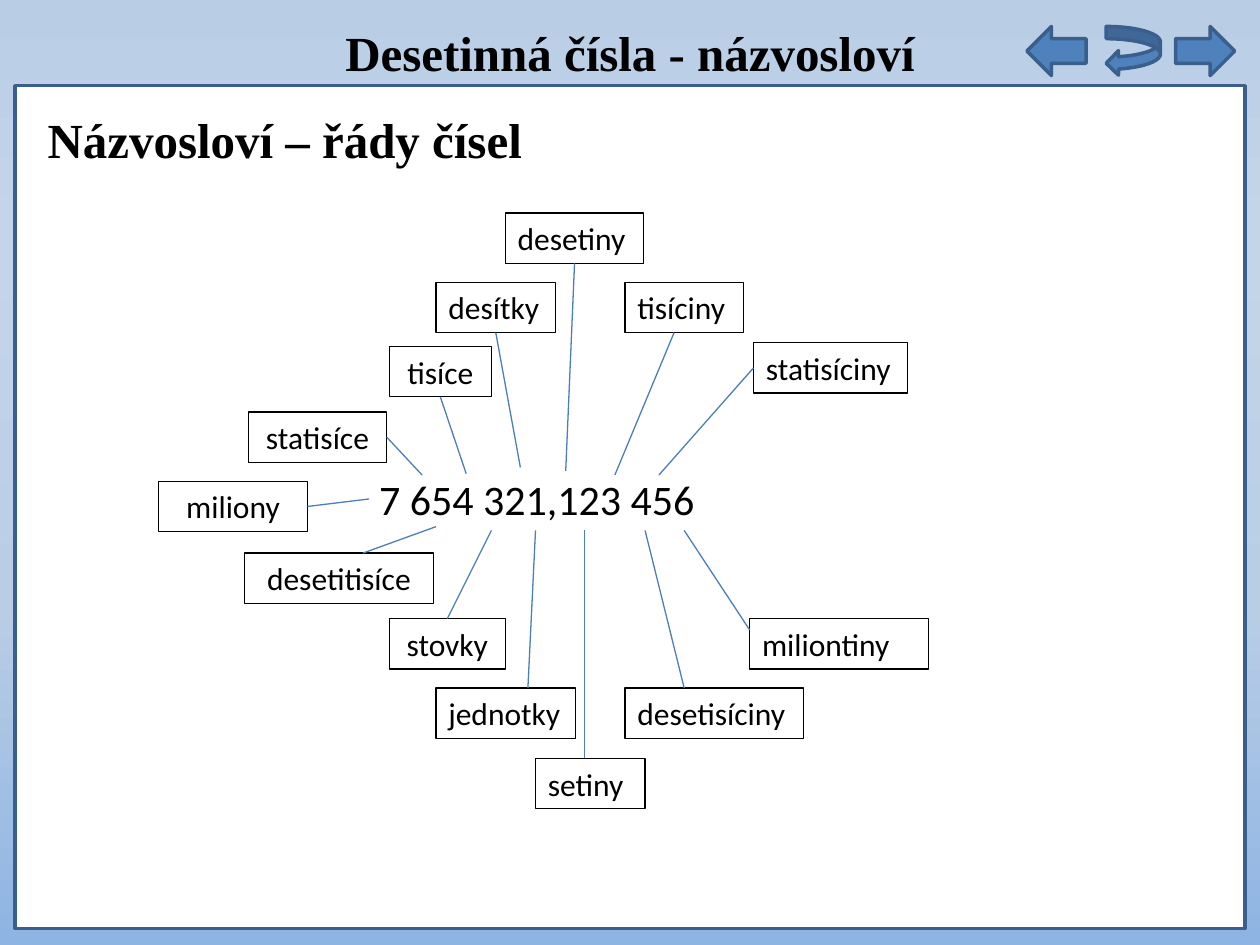
from copy import deepcopy
from dataclasses import dataclass
from enum import IntEnum

from lxml.etree import SubElement
from pptx import Presentation
from pptx.dml.color import RGBColor
from pptx.enum.shapes import MSO_CONNECTOR as Connector, MSO_SHAPE as Shape
from pptx.enum.text import MSO_AUTO_SIZE as AutoSize, PP_ALIGN as Align
from pptx.oxml.ns import qn
from pptx.util import Inches, Pt


@dataclass(frozen=True)
class Theme:
    """Colours, fonts and sizes of the slide."""
    ink: str = "000000"
    paper: str = "FFFFFF"
    accent: str = "4F81BD"
    border: str = "3A5F8C"
    leader: str = "4B7EBC"
    backdrop: tuple = ((0, "B9CDE5"), (25, "C5D5E9"), (64, "B9CDE5"), (100, "8EB4E3"))
    heading_font: str = "Times New Roman"
    body_font: str = "Calibri"
    heading_size: int = 28
    number_size: int = 24
    label_size: int = 18
    border_width: float = 2
    thin_width: float = 0.75


@dataclass(frozen=True)
class Box:
    """A rectangle in inches."""
    left: float
    top: float
    width: float
    height: float

    def inner(self, x, y, width, height):
        """Return a box placed relative to this one."""
        return Box(self.left + x, self.top + y, width, height)

    def point(self, x, y):
        """Return a relative point as slide lengths."""
        return Inches(self.left + x), Inches(self.top + y)

    def lengths(self):
        """Return left, top, width and height as slide lengths."""
        return [Inches(v) for v in (self.left, self.top, self.width, self.height)]


class Side(IntEnum):
    """Connection sites of a rectangle."""
    TOP = 0
    LEFT = 1
    BOTTOM = 2
    RIGHT = 3


THEME = Theme()
LABEL_HEIGHT = 0.4
# name, left, top, width, leader start (side or point), leader end, alignment
PLACES = (
    ("desetiny", 2.75, 0, 1.1, Side.BOTTOM, (3.23, 2.05), Align.LEFT),
    ("tisíciny", 3.7, 0.55, 0.94, (4.09, 0.95), (3.62, 2.08), Align.LEFT),
    ("setiny", 2.99, 4.33, 0.87, (3.38, 4.33), (3.38, 2.52), Align.LEFT),
    ("desetisíciny", 3.7, 3.77, 1.42, (4.17, 3.77), (3.86, 2.52), Align.LEFT),
    ("statisíciny", 4.72, 1.03, 1.22, Side.LEFT, (3.97, 2.08), Align.LEFT),
    ("miliontiny", 4.69, 3.22, 1.42, (4.69, 3.31), (4.17, 2.52), Align.LEFT),
    ("jednotky", 2.2, 3.77, 1.11, (2.93, 3.77), (2.99, 2.52), Align.LEFT),
    ("stovky", 1.83, 3.22, 0.92, Side.TOP, (2.64, 2.52), Align.CENTER),
    ("desítky", 2.2, 0.55, 0.95, Side.BOTTOM, (2.87, 2.02), Align.LEFT),
    ("tisíce", 1.83, 1.06, 0.81, Side.BOTTOM, (2.44, 2.07), Align.CENTER),
    ("statisíce", 0.71, 1.58, 1.1, Side.RIGHT, (2.09, 2.08), Align.CENTER),
    ("desetitisíce", 0.68, 2.7, 1.5, (1.62, 2.7), (2.2, 2.49), Align.CENTER),
    ("miliony", 0, 2.13, 1.18, Side.RIGHT, (1.67, 2.27), Align.CENTER),
)


def colour(value):
    """Turn a hex value into a colour."""
    return RGBColor.from_string(value)


def outline(line, value, width):
    """Give a line its colour and width."""
    line.color.rgb = colour(value)
    line.width = Pt(width)


def write(holder, text, font, size, bold=False, align=Align.LEFT):
    """Write one formatted run into a text holder."""
    frame = holder.text_frame
    frame.word_wrap = True
    frame.auto_size = AutoSize.SHAPE_TO_FIT_TEXT
    paragraph = frame.paragraphs[0]
    paragraph.alignment = align
    run = paragraph.add_run()
    run.text = text
    run.font.name, run.font.size, run.font.bold = font, Pt(size), bold
    run.font.color.rgb = colour(THEME.ink)


def add_text(slide, box, text, font, size, **style):
    """Add a text box and return it."""
    holder = slide.shapes.add_textbox(*box.lengths())
    write(holder, text, font, size, **style)
    return holder


def add_solid(slide, kind, box, fill):
    """Add a bordered preset shape."""
    solid = slide.shapes.add_shape(kind, *box.lengths())
    solid.shadow.inherit = False
    solid.fill.solid()
    solid.fill.fore_color.rgb = colour(fill)
    outline(solid.line, THEME.border, THEME.border_width)


def paint_backdrop(slide):
    """Fill the background with a vertical gradient."""
    fill = slide.background.fill
    fill.gradient()
    fill.gradient_angle = 270
    stops = slide._element.find(".//" + qn("a:gsLst"))
    while len(stops) < len(THEME.backdrop):
        stops.append(deepcopy(stops[0]))
    for stop, (position, value) in zip(fill.gradient_stops, THEME.backdrop):
        stop.color.rgb = colour(value)
        stop.position = position / 100


def place_title(slide, box):
    """Place the slide title."""
    title = slide.shapes.title
    title.left, title.top, title.width, title.height = box.lengths()
    write(title, "Desetinná čísla - názvosloví", THEME.heading_font,
          THEME.heading_size, bold=True, align=Align.CENTER)


def place_navigation(slide, box):
    """Place the back, return and forward arrows."""
    arrows = ((Shape.LEFT_ARROW, 0, 0.47), (Shape.CURVED_LEFT_ARROW, 0.63, 0.43),
              (Shape.RIGHT_ARROW, 1.18, 0.47))
    for kind, x, width in arrows:
        add_solid(slide, kind, box.inner(x, 0, width, box.height), THEME.accent)


def place_panel(slide, box):
    """Place the white panel and its heading."""
    add_solid(slide, Shape.RECTANGLE, box, THEME.paper)
    add_text(slide, box.inner(0.16, 0.14, 9.6, 0.57), "Názvosloví – řády čísel",
             THEME.heading_font, THEME.heading_size, bold=True)


def place_leader(slide, box, label, start, end):
    """Draw a line from a label to its digit."""
    begin = (0, 0) if isinstance(start, Side) else box.point(*start)
    leader = slide.shapes.add_connector(Connector.STRAIGHT, *begin, *box.point(*end))
    if isinstance(start, Side):
        leader.begin_connect(label, start)
    outline(leader.line, THEME.leader, THEME.thin_width)
    SubElement(leader._element.spPr, qn("a:effectLst"))


def place_orders(slide, box):
    """Place the number with the names of its orders."""
    add_text(slide, box.inner(1.65, 2.02, 2.78, 0.5), "7 654 321,123 456",
             THEME.body_font, THEME.number_size)
    for name, x, y, width, start, end, align in PLACES:
        label = add_text(slide, box.inner(x, y, width, LABEL_HEIGHT), name,
                         THEME.body_font, THEME.label_size, align=align)
        outline(label.line, THEME.ink, THEME.thin_width)
        place_leader(slide, box, label, start, end)


def main():
    """Build and save the slide."""
    deck = Presentation()
    deck.slide_width, deck.slide_height = Inches(10), Inches(7.5)
    slide = deck.slides.add_slide(deck.slide_layouts[5])
    paint_backdrop(slide)
    place_title(slide, Box(0.12, 0.13, 9.76, 0.57))
    place_panel(slide, Box(0.12, 0.68, 9.76, 6.69))
    place_navigation(slide, Box(8.15, 0.21, 1.65, 0.39))
    place_orders(slide, Box(1.26, 1.69, 6.11, 4.73))
    deck.save("out.pptx")


if __name__ == "__main__":
    main()
